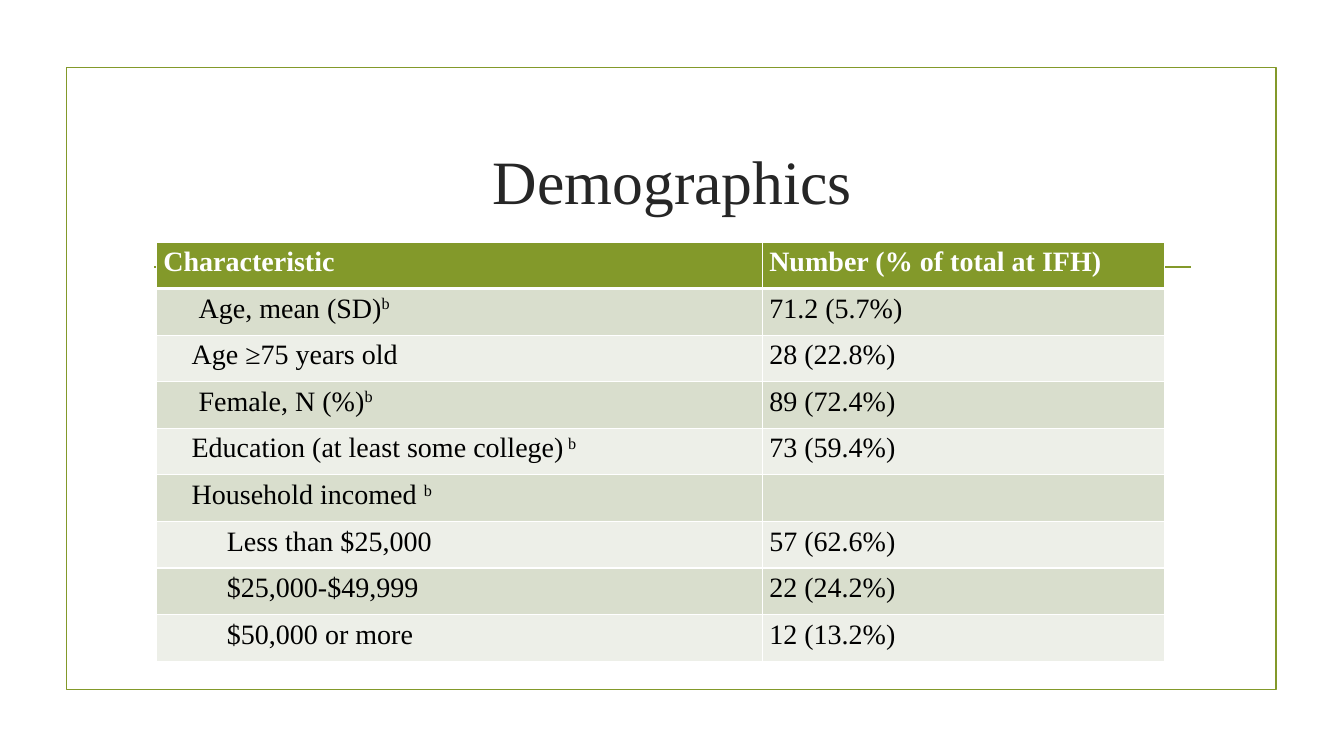
from lxml.etree import SubElement
from pptx import Presentation
from pptx.dml.color import RGBColor
from pptx.enum.shapes import MSO_CONNECTOR as Connector, MSO_SHAPE as Shape
from pptx.enum.text import MSO_ANCHOR as Anchor, PP_ALIGN as Align
from pptx.oxml.ns import qn
from pptx.util import Inches, Pt

TITLE = "Demographics"
HEADER = ("Characteristic", "Number (% of total at IFH)")
ROWS = [
    (5, "Age, mean (SD)", "b", "71.2 (5.7%)"),
    (4, "Age ≥75 years old", "", "28 (22.8%)"),
    (5, "Female, N (%)", "b", "89 (72.4%)"),
    (4, "Education (at least some college)", " b", "73 (59.4%)"),
    (4, "Household incomed ", "b", ""),
    (9, "Less than $25,000", "", "57 (62.6%)"),
    (9, "$25,000-$49,999", "", "22 (24.2%)"),
    (9, "$50,000 or more", "", "12 (13.2%)"),
]

FONT = "Times New Roman"
GREEN = RGBColor(0x83, 0x99, 0x2A)
BANDS = (RGBColor(0xD9, 0xDE, 0xCD), RGBColor(0xED, 0xEF, 0xE8))
WHITE = RGBColor(0xFF, 0xFF, 0xFF)
BLACK = RGBColor(0, 0, 0)
DARK = RGBColor(0x26, 0x26, 0x26)

WIDTH, HEIGHT = 13.33, 7.5
FRAME = (0.66, 0.67, 12, 6.17)
RULE = (1.53, 2.65, 11.81, 2.65)
TITLE_BOX = (1.42, 1.07, 10.5, 1.43)
TABLE_LEFT, TABLE_TOP, TABLE_HEIGHT = 1.55, 2.4, 4.16
COLUMNS = (6.01, 3.99)
STEP = 0.07


def inches(values):
    return [Inches(value) for value in values]


def style(font, size, color, bold=False):
    font.name, font.size, font.bold = FONT, Pt(size), bold
    font.color.rgb = color


def set_borders(cell, row):
    properties = cell._tc.get_or_add_tcPr()
    widths = {"L": 1, "R": 1, "T": 3 if row == 1 else 1, "B": 3 if row == 0 else 1}
    for side, width in widths.items():
        line = SubElement(properties, qn(f"a:ln{side}"), w=str(Pt(width)))
        fill = SubElement(line, qn("a:solidFill"))
        SubElement(fill, qn("a:srgbClr"), val=str(WHITE))


def fill_cell(cell, row, text, note="", indent=0):
    set_borders(cell, row)
    cell.fill.solid()
    cell.fill.fore_color.rgb = BANDS[(row - 1) % 2] if row else GREEN
    cell.margin_left, cell.margin_right = Inches(STEP * (indent + 1)), Inches(STEP)
    cell.margin_top = cell.margin_bottom = 0
    paragraph = cell.text_frame.paragraphs[0]
    paragraph.line_spacing, paragraph.space_after = 1.15, Pt(8)
    for part in filter(None, (text, note)):
        run = paragraph.add_run()
        run.text = part
        style(run.font, 20, BLACK if row else WHITE, bold=row == 0)
    if note:
        run._r.get_or_add_rPr().set("baseline", "30000")


def add_frame(slide):
    frame = slide.shapes.add_shape(Shape.RECTANGLE, *inches(FRAME))
    frame.shadow.inherit = False
    frame.fill.background()
    rule = slide.shapes.add_connector(Connector.STRAIGHT, *inches(RULE))
    SubElement(rule._element.spPr, qn("a:effectLst"))
    for shape in (frame, rule):
        shape.line.color.rgb = GREEN
        shape.line.width = Pt(1.25)


def add_title(slide):
    text_frame = slide.shapes.add_textbox(*inches(TITLE_BOX)).text_frame
    text_frame.word_wrap = True
    text_frame.vertical_anchor = Anchor.MIDDLE
    text_frame.text = TITLE
    paragraph = text_frame.paragraphs[0]
    paragraph.alignment = Align.CENTER
    style(paragraph.runs[0].font, 44, DARK)


def add_demographics(slide):
    count = len(ROWS) + 1
    box = inches((TABLE_LEFT, TABLE_TOP, sum(COLUMNS), TABLE_HEIGHT))
    table = slide.shapes.add_table(count, len(COLUMNS), *box).table
    for column, width in zip(table.columns, COLUMNS):
        column.width = Inches(width)
    for index, text in enumerate(HEADER):
        fill_cell(table.cell(0, index), 0, text)
    for row, (indent, label, note, value) in enumerate(ROWS, 1):
        fill_cell(table.cell(row, 0), row, label, note, indent)
        fill_cell(table.cell(row, 1), row, value)


def main():
    presentation = Presentation()
    presentation.slide_width, presentation.slide_height = inches((WIDTH, HEIGHT))
    slide = presentation.slides.add_slide(presentation.slide_layouts[6])
    add_frame(slide)
    add_title(slide)
    add_demographics(slide)
    presentation.save("out.pptx")


if __name__ == "__main__":
    main()
